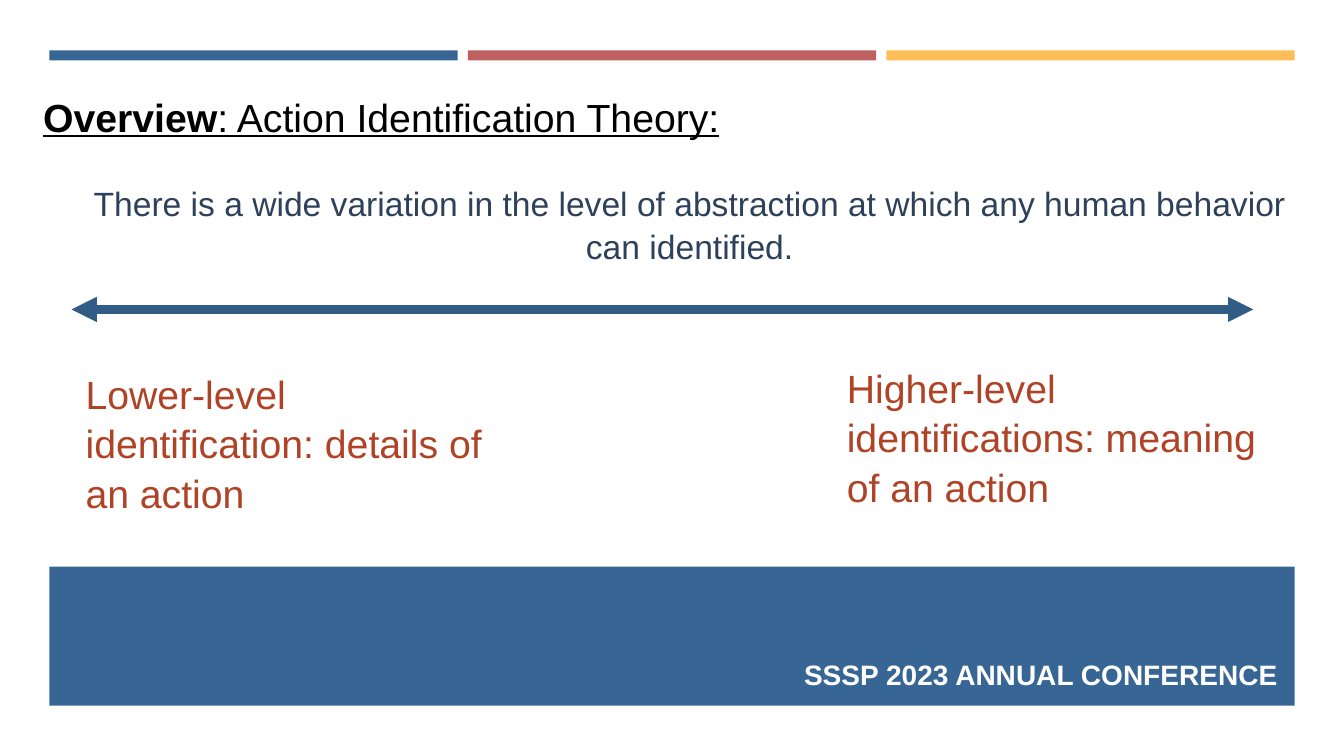
from lxml import etree
from pptx import Presentation
from pptx import util as u
from pptx.dml.color import RGBColor
from pptx.enum import shapes, text
from pptx.oxml.ns import qn

THEME = {
    "blue": "376695", "red": "BE6060", "gold": "FFBD59", "arrow": "315C86",
    "title": "000000", "body": "2E415A", "accent": "B04326", "white": "FFFFFF",
    "font": "Arial", "large": 28, "medium": 24, "small": 20,
}

prs = Presentation()
prs.slide_width, prs.slide_height = u.Inches(13.33), u.Inches(7.5)
s = prs.slides.add_slide(prs.slide_layouts[6])

margin, col, gap = 0.49, 4.05, 0.1
band = 3 * col + 2 * gap


def add_bar(x, y, w, h, color):
    sp = s.shapes.add_shape(shapes.MSO_SHAPE.RECTANGLE, *map(u.Inches, (x, y, w, h)))
    sp.shadow.inherit = False
    sp.fill.solid()
    sp.fill.fore_color.rgb = RGBColor.from_string(THEME[color])
    sp.line.fill.background()


def add_text(box, runs, size, color, align=text.PP_ALIGN.LEFT, spacing=1.05):
    tf = s.shapes.add_textbox(*map(u.Inches, box)).text_frame
    tf.word_wrap = True
    p = tf.paragraphs[0]
    p.alignment = align
    p.line_spacing = spacing
    for words, bold, underline in runs:
        r = p.add_run()
        r.text = words
        r.font.name = THEME["font"]
        r.font.size = u.Pt(THEME[size])
        r.font.bold = bold
        r.font.underline = underline
        r.font.color.rgb = RGBColor.from_string(THEME[color])
    return tf


for i, color in enumerate(("blue", "red", "gold")):
    add_bar(margin + i * (col + gap), 0.5, col, 0.1, color)
add_bar(margin, 5.62, band, 1.38, "blue")

tf = add_text((0.71, 6.45, 12.06, 0.48), [("SSSP 2023 ANNUAL CONFERENCE", True, False)],
              "small", "white", text.PP_ALIGN.RIGHT, 1.0)
tf.vertical_anchor = text.MSO_ANCHOR.MIDDLE

add_text((0.33, 0.85, 12.26, 0.57),
         [("Overview", True, True), (": Action Identification Theory:", False, True)],
         "large", "title")
add_text((0.71, 1.75, 12.26, 0.91),
         [("There is a wide variation in the level of abstraction at which "
           "any human behavior can identified.", False, False)],
         "medium", "body", text.PP_ALIGN.CENTER)

for x, y, w, words in (
    (0.75, 3.6, 4.42, "Lower-level identification: details of an action"),
    (8.3, 3.54, 4.28, "Higher-level identifications: meaning of an action"),
):
    add_text((x, y, w, 1.51), [(words, False, False)], "large", "accent")

axis_y = u.Inches(3.07)
for start, end in ((1.23, 12.43), (1.42, 0.71)):
    cx = s.shapes.add_connector(shapes.MSO_CONNECTOR.STRAIGHT,
                                u.Inches(start), axis_y, u.Inches(end), axis_y)
    cx.line.color.rgb = RGBColor.from_string(THEME["arrow"])
    cx.line.width = u.Pt(6)
    etree.SubElement(cx.line._get_or_add_ln(), qn("a:tailEnd"), type="triangle")
    etree.SubElement(cx._element.spPr, qn("a:effectLst"))

prs.save("out.pptx")
